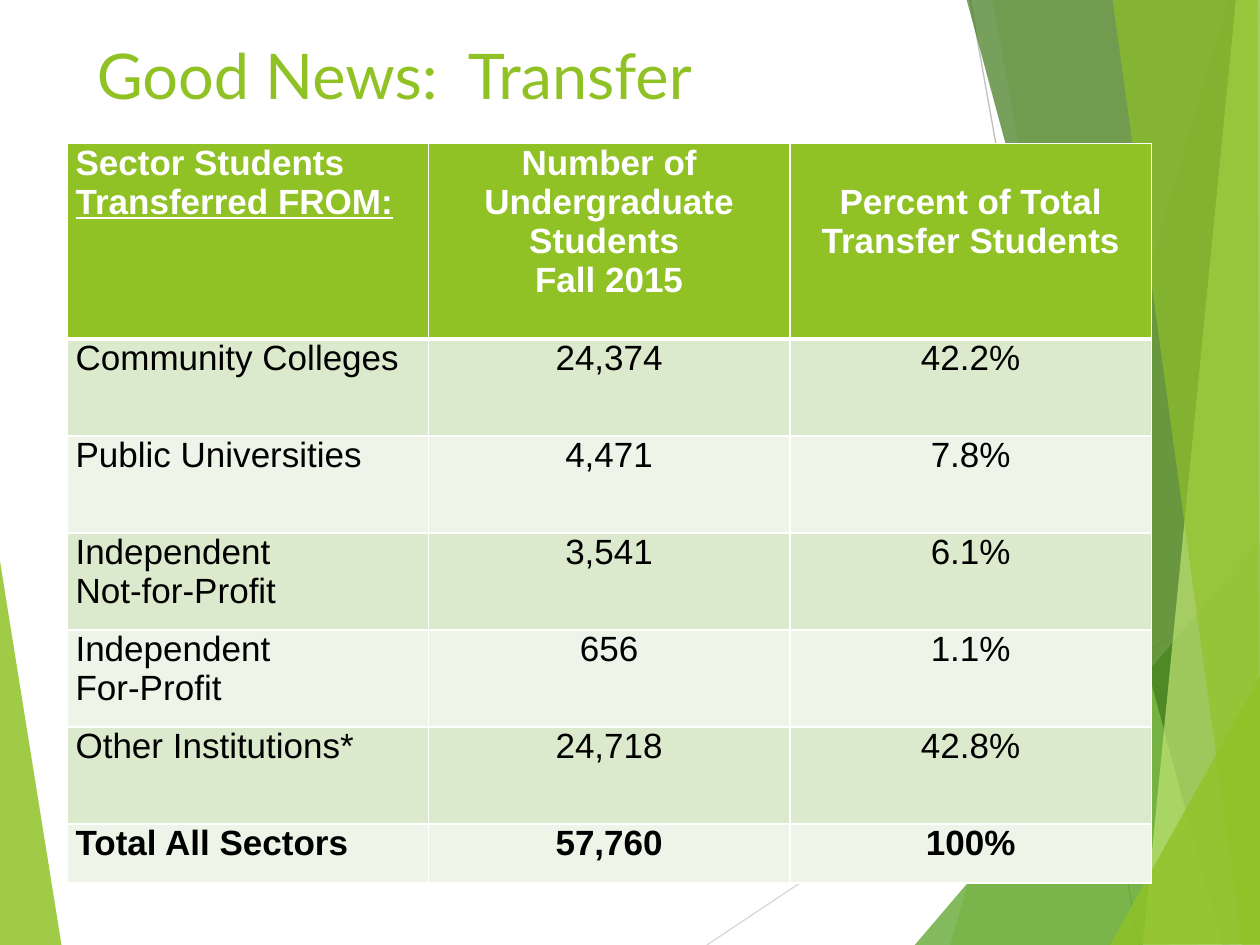
from dataclasses import dataclass

from lxml.etree import SubElement
from pptx import Presentation
from pptx.dml.color import RGBColor
from pptx.enum.shapes import MSO_CONNECTOR
from pptx.enum.text import MSO_ANCHOR, PP_ALIGN
from pptx.oxml.ns import qn
from pptx.util import Inches, Pt


@dataclass(frozen=True)
class Theme:
    green: str = "90C226"
    mid_green: str = "54A021"
    dark_green: str = "3F7819"
    pale_green: str = "C0E474"
    odd_row: str = "DBE9CD"
    even_row: str = "EEF4E8"
    white: str = "FFFFFF"
    black: str = "000000"
    light_gray: str = "D9D9D9"
    gray: str = "BFBFBF"
    title_font: str = "Lato"
    table_font: str = "Arial"
    title_size: int = 36
    table_size: int = 20


THEME = Theme()

RAYS = [
    ((5.61, 7.5), (10.01, 4.57), THEME.light_gray),
    ((7.7, 0), (9.04, 7.5), THEME.gray),
]

# Corner points, colour, opacity in percent
LEFT_FACET = ([(-0.01, 4.39), (0.49, 7.51), (-0.01, 7.5)], THEME.green, 85)
RIGHT_FACETS = [
    ([(9.75, 0), (7.54, 7.5), (10.02, 7.51), (10.01, 0.01)], THEME.green, 30),
    ([(7.88, -0.01), (9.19, 7.5), (10.01, 7.5), (10.01, -0.01)], THEME.green, 20),
    ([(7.26, 7.5), (10, 4.29), (10.01, 7.5)], THEME.mid_green, 72),
    ([(7.67, -0.01), (9.7, 7.5), (10.01, 7.49), (10.01, -0.01)], THEME.dark_green, 70),
    ([(9.81, -0.01), (9.07, 7.5), (10.01, 7.5), (10, -0.01)], THEME.pale_green, 70),
    ([(8.83, -0.01), (9.86, 7.5), (10, 7.5), (9.98, -0.01)], THEME.green, 65),
    ([(8.81, 7.5), (10.01, 5.35), (10.01, 7.49)], THEME.green, 80),
]

ROWS = [
    ("Sector Students ", "Number of Undergraduate Students \nFall 2015",
     "Percent of Total Transfer Students"),
    ("Community Colleges", "24,374", "42.2%"),
    ("Public Universities", "4,471", "7.8%"),
    ("Independent \nNot-for-Profit", "3,541", "6.1%"),
    ("Independent \nFor-Profit", "656", "1.1%"),
    ("Other Institutions*", "24,718", "42.8%"),
    ("Total All Sectors", "57,760", "100%"),
]
ROW_HEIGHTS = [1.55] + [0.77] * 5 + [0.47]
COLUMN_WIDTH = 2.87
HEADER_LINE = 0.31


def add_facet(page, points, color, opacity):
    corners = [(Inches(x), Inches(y)) for x, y in points]
    builder = page.shapes.build_freeform(*corners[0])
    builder.add_line_segments(corners[1:], close=True)
    facet = builder.convert_to_shape()
    facet.shadow.inherit = False
    facet.line.fill.background()
    facet.fill.solid()
    facet.fill.fore_color.rgb = RGBColor.from_string(color)
    tint = facet.fill._xPr.find(qn("a:solidFill"))[0]
    SubElement(tint, qn("a:alpha"), val=str(opacity * 1000))


def add_ray(page, start, end, color):
    ray = page.shapes.add_connector(
        MSO_CONNECTOR.STRAIGHT, *(Inches(value) for value in start + end))
    ray.line.color.rgb = RGBColor.from_string(color)
    ray.line.width = Pt(0.75)
    SubElement(ray._element.spPr, qn("a:effectLst"))


def style_span(span, font, size, color, bold=False):
    span.font.name = font
    span.font.size = Pt(size)
    span.font.color.rgb = RGBColor.from_string(color)
    span.font.bold = bold


def add_title(page, text):
    box = page.shapes.add_textbox(Inches(0.67), Inches(0.24), Inches(6.94), Inches(1))
    frame = box.text_frame
    frame.word_wrap = True
    frame.vertical_anchor = MSO_ANCHOR.TOP
    frame.text = text
    style_span(frame.paragraphs[0].runs[0], THEME.title_font, THEME.title_size, THEME.green)


def set_borders(cell, is_header):
    """Draw white rules, with a heavier one at the header's edge."""
    properties = cell._tc.get_or_add_tcPr()
    for side in ("L", "R", "T", "B"):
        width = Pt(3) if is_header and side == "B" else Pt(1)
        border = SubElement(properties, qn(f"a:ln{side}"), w=str(width))
        fill = SubElement(border, qn("a:solidFill"))
        SubElement(fill, qn("a:srgbClr"), val=THEME.white)


def fill_cell(cell, text, row, column):
    is_header = row == 0
    set_borders(cell, is_header)
    cell.margin_left = cell.margin_right = Inches(0.07)
    cell.margin_top = cell.margin_bottom = 0
    cell.vertical_anchor = MSO_ANCHOR.TOP
    band = THEME.odd_row if row % 2 else THEME.even_row
    cell.fill.solid()
    cell.fill.fore_color.rgb = RGBColor.from_string(THEME.green if is_header else band)

    cell.text_frame.text = text
    if is_header and column == 0:
        underlined = cell.text_frame.paragraphs[0].add_run()
        underlined.text = "Transferred FROM:"
        underlined.font.underline = True
    if column > 0:
        alignment = PP_ALIGN.CENTER
    else:
        alignment = PP_ALIGN.LEFT if is_header else PP_ALIGN.JUSTIFY
    for para in cell.text_frame.paragraphs:
        para.alignment = alignment
        for span in para.runs:
            style_span(span, THEME.table_font, THEME.table_size,
                       THEME.white if is_header else THEME.black,
                       bold=row in (0, len(ROWS) - 1))


def add_transfer_table(page):
    column_count = len(ROWS[0])
    table = page.shapes.add_table(
        len(ROWS), column_count, Inches(0.53), Inches(1.14),
        Inches(COLUMN_WIDTH * column_count), Inches(sum(ROW_HEIGHTS))).table
    for column in table.columns:
        column.width = Inches(COLUMN_WIDTH)
    for row, height in zip(table.rows, ROW_HEIGHTS):
        row.height = Inches(height)
    for row, texts in enumerate(ROWS):
        for column, text in enumerate(texts):
            fill_cell(table.cell(row, column), text, row, column)
    table.cell(0, 2).margin_top = Inches(HEADER_LINE)


def main():
    deck = Presentation()
    deck.slide_width, deck.slide_height = Inches(10), Inches(7.5)
    page = deck.slides.add_slide(deck.slide_layouts[6])
    add_facet(page, *LEFT_FACET)
    for ray in RAYS:
        add_ray(page, *ray)
    for facet in RIGHT_FACETS:
        add_facet(page, *facet)
    add_title(page, "Good News:  Transfer")
    add_transfer_table(page)
    deck.save("out.pptx")


if __name__ == "__main__":
    main()
